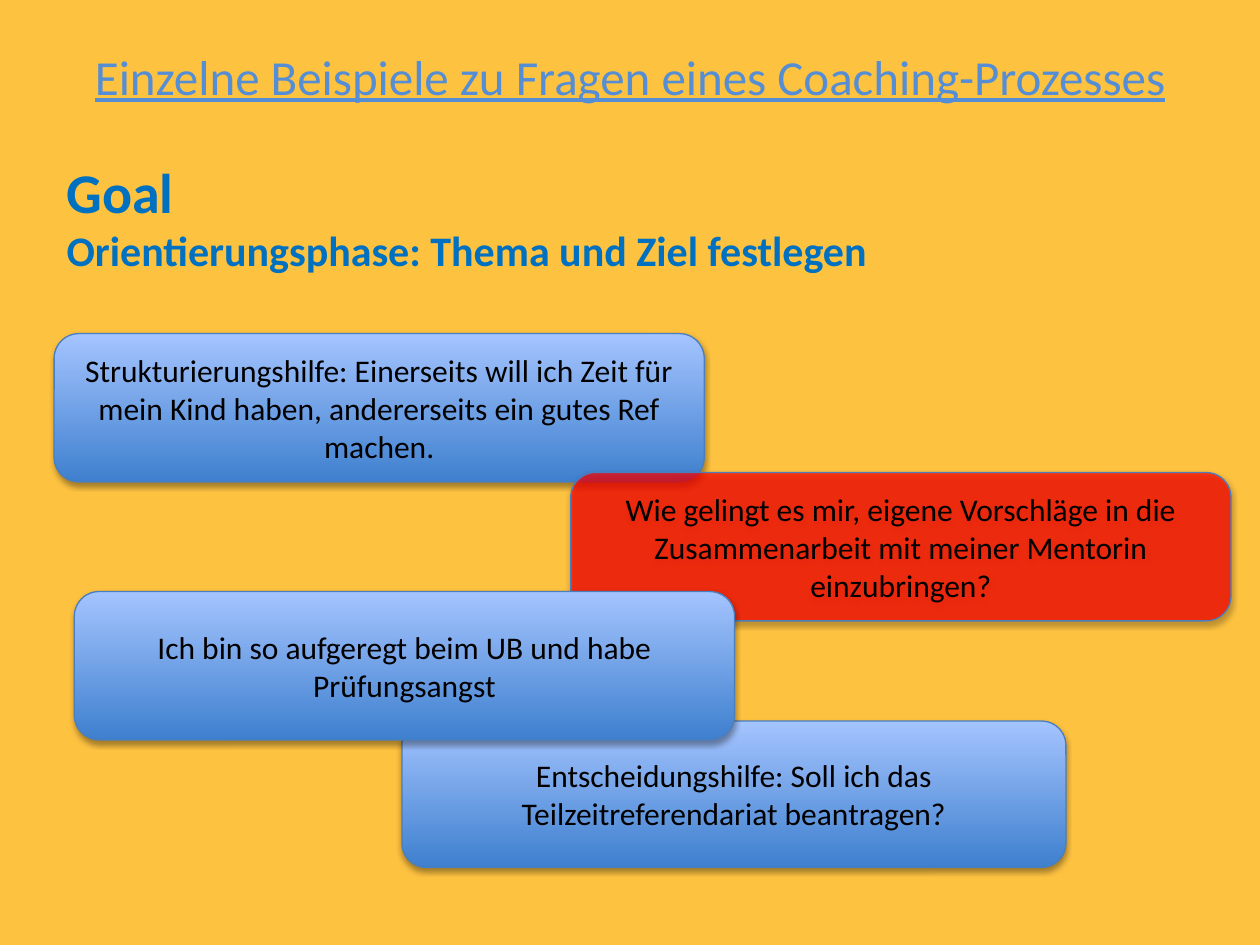
from lxml.etree import SubElement
from pptx import Presentation
from pptx.dml.color import RGBColor
from pptx.enum.shapes import MSO_SHAPE
from pptx.enum.text import MSO_ANCHOR, PP_ALIGN
from pptx.oxml.ns import qn
from pptx.util import Inches, Pt

WIDTH, HEIGHT = Inches(10), Inches(7.5)
COLORS = {
    "background": "FEC241",
    "title": "558ED5",
    "heading": "0070C0",
    "card_bottom": "3F80CE",
    "card_top": "A4C4FF",
    "highlight": "FF0000",
    "outline": "4B7EBC",
    "shadow": "000000",
    "text": "000000",
}
TITLE_FONT = {"name": "Calibri", "size": Pt(28), "underline": True}
GOAL_FONT = {"name": "Calibri", "size": Pt(32), "bold": True}
PHASE_FONT = {"name": "Calibri", "size": Pt(24), "bold": True}
CARD_FONT = {"name": "Calibri", "size": Pt(18)}
SHADOW = {"blurRad": Pt(3.1), "dist": Pt(1.8), "dir": 90 * 60000, "rotWithShape": 0}

TITLE_BOX = (0.05, 0.04, 0.9, 0.08)
HEADING_BOX = (0.043, 0.12, 0.89, 0.24)
CARDS = [
    ((0.043, 0.353, 0.516, 0.157), False,
     "Strukturierungshilfe: Einerseits will ich Zeit für mein Kind haben, "
     "andererseits ein gutes Ref machen."),
    ((0.319, 0.763, 0.527, 0.155), False,
     "Entscheidungshilfe: Soll ich das Teilzeitreferendariat beantragen?"),
    ((0.453, 0.5, 0.524, 0.157), True,
     "Wie gelingt es mir, eigene Vorschläge in die Zusammenarbeit mit meiner "
     "Mentorin einzubringen?"),
    ((0.059, 0.626, 0.524, 0.157), False,
     "Ich bin so aufgeregt beim UB und habe Prüfungsangst"),
]


def rgb(name):
    """Return the named colour."""
    return RGBColor.from_string(COLORS[name])


def place(box):
    """Turn shares of the slide into lengths."""
    left, top, width, height = box
    return (round(left * WIDTH), round(top * HEIGHT),
            round(width * WIDTH), round(height * HEIGHT))


def write(para, text, font, color, align=PP_ALIGN.LEFT):
    """Fill a paragraph with one formatted span."""
    para.alignment = align
    span = para.add_run()
    span.text = text
    for key, value in font.items():
        setattr(span.font, key, value)
    span.font.color.rgb = rgb(color)


def add_title(page, box):
    """Place the centred, underlined title."""
    frame = page.shapes.add_textbox(*place(box)).text_frame
    frame.word_wrap = True
    frame.vertical_anchor = MSO_ANCHOR.MIDDLE
    write(frame.paragraphs[0], "Einzelne Beispiele zu Fragen eines Coaching-Prozesses",
          TITLE_FONT, "title", PP_ALIGN.CENTER)


def add_heading(page, box):
    """Place the phase name above its description."""
    frame = page.shapes.add_textbox(*place(box)).text_frame
    frame.word_wrap = True
    frame.margin_top = Inches(0.35)
    write(frame.paragraphs[0], "Goal", GOAL_FONT, "heading")
    write(frame.add_paragraph(), "Orientierungsphase: Thema und Ziel festlegen",
          PHASE_FONT, "heading")


def add_alpha(color, percent):
    """Make a colour element translucent."""
    SubElement(color, qn("a:alpha")).set("val", str(percent * 1000))


def add_shadow(shape):
    """Cast a soft shadow below a shape."""
    shape.shadow.inherit = False
    effects = shape._element.spPr.find(qn("a:effectLst"))
    shadow = SubElement(effects, qn("a:outerShdw"))
    for key, value in SHADOW.items():
        shadow.set(key, str(value))
    color = SubElement(shadow, qn("a:srgbClr"))
    color.set("val", COLORS["shadow"])
    add_alpha(color, 35)


def paint(shape, highlighted):
    """Fill a card in translucent red or with the blue gradient."""
    if highlighted:
        shape.fill.solid()
        shape.fill.fore_color.rgb = rgb("highlight")
        solid = shape._element.spPr.find(qn("a:solidFill"))
        add_alpha(solid[0], 71)
        return
    shape.fill.gradient()
    shape.fill.gradient_angle = 90
    stops = zip(shape.fill.gradient_stops, ("card_bottom", "card_top"))
    for position, (stop, color) in enumerate(stops):
        stop.position = position
        stop.color.rgb = rgb(color)


def add_card(page, box, highlighted, text):
    """Place one rounded card with a coaching question."""
    card = page.shapes.add_shape(MSO_SHAPE.ROUNDED_RECTANGLE, *place(box))
    paint(card, highlighted)
    card.line.color.rgb = rgb("outline")
    card.line.width = Pt(0.75)
    add_shadow(card)
    frame = card.text_frame
    frame.word_wrap = True
    frame.vertical_anchor = MSO_ANCHOR.MIDDLE
    write(frame.paragraphs[0], text, CARD_FONT, "text", PP_ALIGN.CENTER)


def main():
    """Build and save the slide."""
    deck = Presentation()
    deck.slide_width, deck.slide_height = WIDTH, HEIGHT
    page = deck.slides.add_slide(deck.slide_layouts[6])
    page.background.fill.solid()
    page.background.fill.fore_color.rgb = rgb("background")
    add_title(page, TITLE_BOX)
    add_heading(page, HEADING_BOX)
    for box, highlighted, text in CARDS:
        add_card(page, box, highlighted, text)
    deck.save("out.pptx")


if __name__ == "__main__":
    main()
